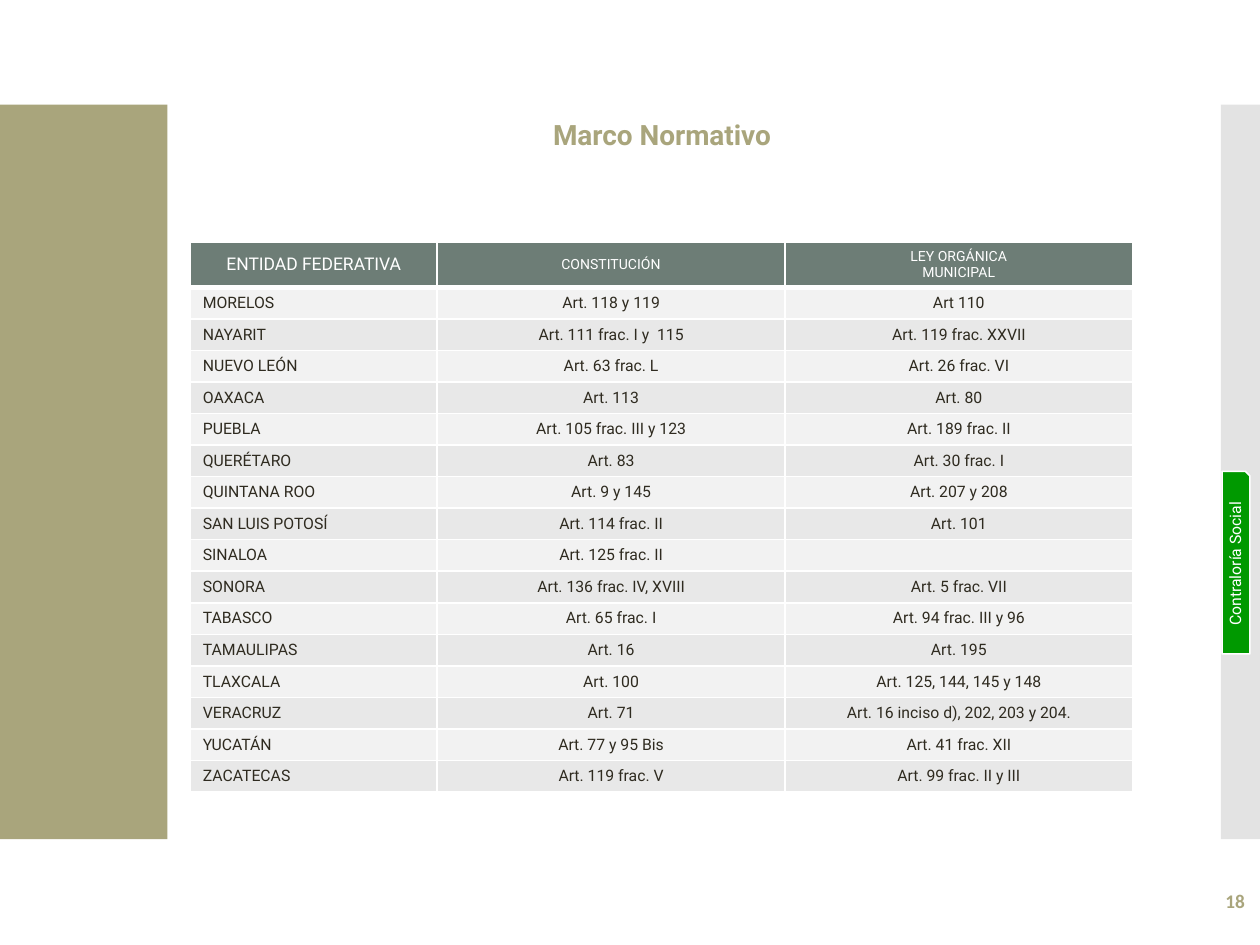
from dataclasses import dataclass
from typing import NamedTuple

from lxml import etree
from pptx import Presentation
from pptx.dml.color import RGBColor
from pptx.enum import shapes, text
from pptx.oxml import ns
from pptx.util import Emu, Inches, Pt


@dataclass(frozen=True)
class Theme:
    font: str = "Roboto"
    number_font: str = "Calibri"
    khaki: str = "A9A57C"
    grey: str = "C8C8C8"
    green: str = "009900"
    header: str = "6D7D76"
    bands: tuple[str, str] = ("F2F2F2", "E8E8E8")
    ink: str = "2F2B20"
    white: str = "FFFFFF"
    title_size: int = 16
    number_size: int = 11
    head_size: int = 10
    subhead_size: int = 8
    body_size: int = 9


class Box(NamedTuple):
    left: float
    top: float
    width: float
    height: float

    def emu(self) -> list[Emu]:
        return [Inches(v) for v in self]


class Entity(NamedTuple):
    name: str
    constitution: str
    municipal_law: str


T = Theme()
ALIGN = text.PP_ALIGN
MIDDLE = text.MSO_ANCHOR.MIDDLE
HEADERS = ("ENTIDAD FEDERATIVA", "CONSTITUCIÓN", "LEY ORGÁNICA\nMUNICIPAL")
ENTITIES = [
    Entity("MORELOS", "Art. 118 y 119", "Art 110"),
    Entity("NAYARIT", "Art. 111 frac. I y  115", "Art. 119 frac. XXVII"),
    Entity("NUEVO LEÓN", "Art. 63 frac. L", "Art. 26 frac. VI"),
    Entity("OAXACA", "Art. 113", "Art. 80"),
    Entity("PUEBLA", "Art. 105 frac. III y 123", "Art. 189 frac. II"),
    Entity("QUERÉTARO", "Art. 83", "Art. 30 frac. I"),
    Entity("QUINTANA ROO", "Art. 9 y 145", "Art. 207 y 208"),
    Entity("SAN LUIS POTOSÍ", "Art. 114 frac. II", "Art. 101"),
    Entity("SINALOA", "Art. 125 frac. II", ""),
    Entity("SONORA", "Art. 136 frac. IV, XVIII", "Art. 5 frac. VII"),
    Entity("TABASCO", "Art. 65 frac. I", "Art. 94 frac. III y 96"),
    Entity("TAMAULIPAS", "Art. 16", "Art. 195"),
    Entity("TLAXCALA", "Art. 100", "Art. 125, 144, 145 y 148"),
    Entity("VERACRUZ", "Art. 71", "Art. 16 inciso d), 202, 203 y 204."),
    Entity("YUCATÁN", "Art. 77 y 95 Bis", "Art. 41 frac. XII"),
    Entity("ZACATECAS", "Art. 119 frac. V", "Art. 99 frac. II y III"),
]
TABLE = Box(1.51, 1.92, 7.48, 4.37)
COLUMNS = (1.96, 2.76, 2.76)
HEADER_HEIGHT = 0.36


def write(tf, content: str, size: float, color: str, align=ALIGN.CENTER,
          bold: bool = False, font: str = T.font) -> None:
    tf.text = content
    for p in tf.paragraphs:
        p.alignment = align
        for r in p.runs:
            r.font.name, r.font.size, r.font.bold = font, Pt(size), bold
            r.font.color.rgb = RGBColor.from_string(color)
        if not p.runs:  # keeps an empty line from growing its row
            etree.SubElement(p._p, ns.qn("a:endParaRPr"), sz=str(size * 100))


def add_block(s, kind, box: Box, fill: str, opacity: int = 100):
    sp = s.shapes.add_shape(kind, *box.emu())
    sp.shadow.inherit = False
    sp.fill.solid()
    sp.fill.fore_color.rgb = RGBColor.from_string(fill)
    sp.line.fill.background()
    if opacity < 100:
        color = sp._element.spPr.find(".//" + ns.qn("a:srgbClr"))
        etree.SubElement(color, ns.qn("a:alpha"), val=str(opacity * 1000))
    return sp


def add_title(s) -> None:
    title = s.shapes.title
    title.left, title.top, title.width, title.height = Box(1.33, 0.88, 7.85, 0.37).emu()
    title.text_frame.vertical_anchor = text.MSO_ANCHOR.TOP
    write(title.text_frame, "Marco Normativo", T.title_size, T.khaki, bold=True)


def add_tab(s) -> None:
    tab = add_block(s, shapes.MSO_SHAPE.SNIP_1_RECTANGLE, Box(9.7, 3.74, 0.22, 1.45), T.green)
    tab.line.color.rgb = RGBColor.from_string(T.white)
    tab.line.width = Pt(0.85)
    tf = tab.text_frame
    tf.vertical_anchor = MIDDLE
    tf.margin_left = tf.margin_right = tf.margin_top = tf.margin_bottom = 0
    tf._txBody.bodyPr.set("vert", "vert270")
    write(tf, "Contraloría Social", T.body_size, T.white)


def add_page_number(s) -> None:
    tf = s.shapes.add_textbox(*Box(8.72, 6.95, 1.26, 0.4).emu()).text_frame
    tf.word_wrap = True
    tf.vertical_anchor = MIDDLE
    write(tf, "18", T.number_size, T.khaki, ALIGN.RIGHT, True, T.number_font)


def set_borders(cell, **widths: float) -> None:
    """Draw white borders; keys are L, R, T and B, in that order."""
    for side, width in widths.items():
        ln = etree.SubElement(cell._tc.get_or_add_tcPr(), ns.qn(f"a:ln{side}"),
                              w=str(int(Pt(width))))
        fill = etree.SubElement(ln, ns.qn("a:solidFill"))
        etree.SubElement(fill, ns.qn("a:srgbClr"), val=T.white)


def fill_cell(cell, content: str, size: float, color: str, fill: str, align,
              top: float = 1, bottom: float = 1) -> None:
    set_borders(cell, L=1, R=1, T=top, B=bottom)
    cell.fill.solid()
    cell.fill.fore_color.rgb = RGBColor.from_string(fill)
    cell.vertical_anchor = MIDDLE
    cell.margin_top = cell.margin_bottom = Inches(0.03)
    write(cell.text_frame, content, size, color, align)


def add_entity_table(s) -> None:
    table = s.shapes.add_table(len(ENTITIES) + 1, len(COLUMNS), *TABLE.emu()).table
    for column, width in zip(table.columns, COLUMNS):
        column.width = Inches(width)
    row_height = (TABLE.height - HEADER_HEIGHT) / len(ENTITIES)
    for i, row in enumerate(table.rows):
        row.height = Inches(row_height if i else HEADER_HEIGHT)
    for j, label in enumerate(HEADERS):
        size = T.subhead_size if j else T.head_size
        fill_cell(table.cell(0, j), label, size, T.white, T.header, ALIGN.CENTER, bottom=3)
    for i, entity in enumerate(ENTITIES):
        for j, value in enumerate(entity):
            fill_cell(table.cell(i + 1, j), value, T.body_size, T.ink, T.bands[i % 2],
                      ALIGN.CENTER if j else ALIGN.LEFT, top=1 if i else 3)


def main() -> None:
    prs = Presentation()
    prs.slide_width, prs.slide_height = Inches(10), Inches(7.5)
    s = prs.slides.add_slide(prs.slide_layouts[5])
    add_block(s, shapes.MSO_SHAPE.RECTANGLE, Box(0, 0.83, 1.33, 5.83), T.khaki)
    add_block(s, shapes.MSO_SHAPE.RECTANGLE, Box(9.69, 0.83, 0.31, 5.83), T.grey, opacity=50)
    add_tab(s)
    add_title(s)
    add_page_number(s)
    add_entity_table(s)
    prs.save("out.pptx")


if __name__ == "__main__":
    main()
